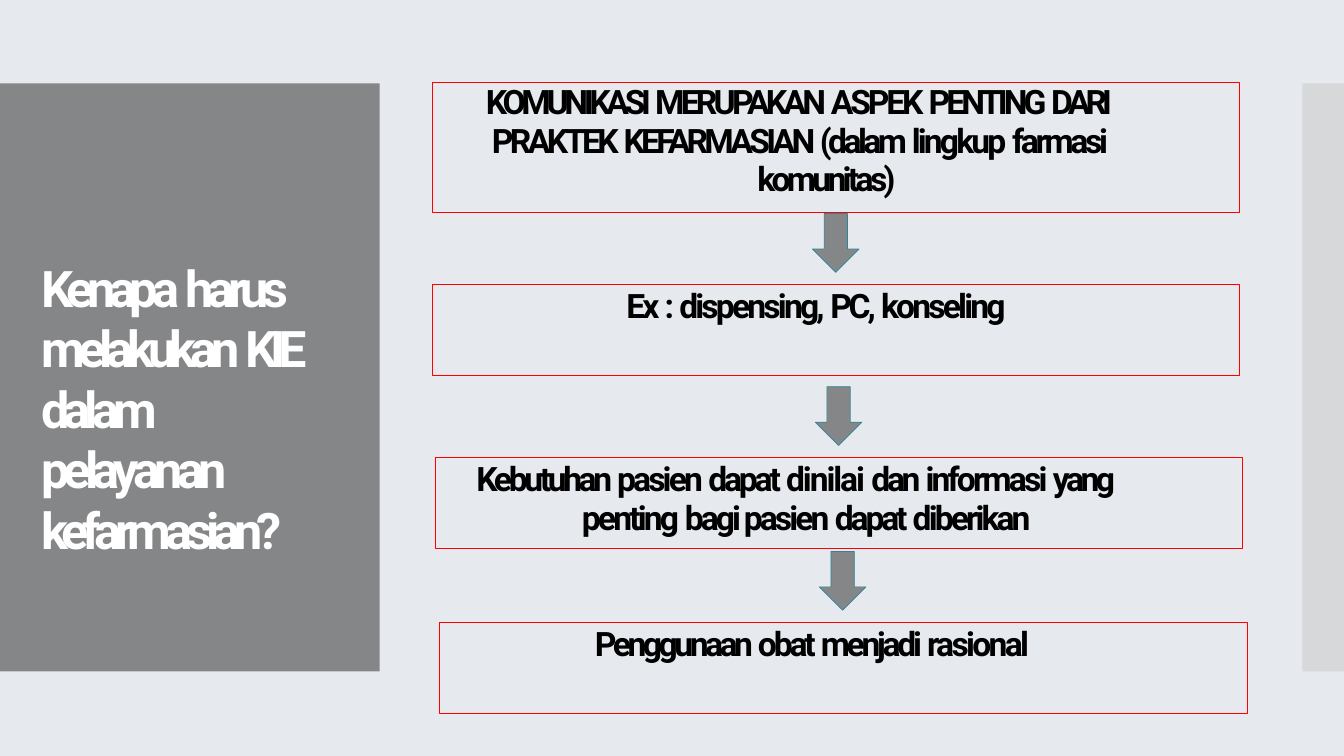
from pptx import Presentation
from pptx.dml.color import RGBColor
from pptx.enum import shapes, text
from pptx.oxml import ns, xmlchemy
from pptx.util import Pt

FONT = "Roboto"
GREY, RED, TEAL = "858688", "FF0000", "2C869A"
PANEL_TOP, PANEL_HEIGHT = 89.3, 630
BOX_WIDTH = 865
ARROW_SIZE = (50, 63)

TITLE = [("Kenapa", -6.7), ("harus", -6.5), ("melakukan", -6.7), ("KIE", -7.7),
         ("dalam", -6.2), ("pelayanan", -6.1), ("kefarmasian?", -6.5)]

STEPS = [
    {"box": (463.5, 88.3, 139), "text": (519.8, 87.8, 752.4, 125.3), "inset": 0.9,
     "paras": [
         {"margin": 0.9, "indent": 0, "before": 1, "line": 41.1,
          "words": [("KOMUNIKASI", -4.6), ("MERUPAKAN", -4), ("ASPEK", -3.4),
                    ("PENTING", -4.1), ("DARI", -5.2)]},
         {"margin": 291.6, "indent": -284.4, "before": 1.1, "line": 41,
          "words": [("PRAKTEK", -3.8), ("KEFARMASIAN", -4), ("(dalam", -3.8),
                    ("lingkup", -3), ("farmasi", -3.5), ("komunitas)", -3.9)]}]},
    {"box": (463.5, 304.3, 98), "text": (670.3, 304.6, 451.4, 45.4), "inset": 0.9,
     "paras": [
         {"margin": 0.9, "indent": 0, "before": 1, "line": None,
          "words": [("Ex", -3.3), (":", -3.5), ("dispensing,", -3), ("PC,", -3.4),
                    ("konseling", -3)]}]},
    {"box": (466.3, 490, 98), "text": (509, 488.9, 779.8, 86.4), "inset": 4.3,
     "paras": [
         {"margin": 114.5, "indent": -113, "before": 4.2, "line": 41,
          "words": [("Kebutuhan", -3.6), ("pasien", -3.1), ("dapat", -3.4),
                    ("dinilai", -2.2), ("dan", -3.6), ("informasi", -3),
                    ("yang", -3.8), ("penting", -3), ("bagi pasien", -3.1),
                    ("dapat", -3.4), ("diberikan", -3.1)]}]},
    {"box": (471.2, 667, 98), "text": (636.5, 666.7, 533.5, 45.4), "inset": 0.9,
     "paras": [
         {"margin": 0.9, "indent": 0, "before": 1, "line": None,
          "words": [("Penggunaan", -3.7), ("obat", -3.4), ("menjadi", -3.5),
                    ("rasional", -2.9)]}]},
]

ARROWS = [(870.5, 228.8), (873.5, 414.3), (877.8, 590.8)]


def color(value):
    return RGBColor.from_string(value)


def add_preset(page, kind, left, top, width, height, fill=None, line=None, weight=1):
    shape = page.shapes.add_shape(kind, Pt(left), Pt(top), Pt(width), Pt(height))
    shape.shadow.inherit = False
    if fill:
        shape.fill.solid()
        shape.fill.fore_color.rgb = color(fill)
    else:
        shape.fill.background()
    if line:
        shape.line.color.rgb = color(line)
        shape.line.width = Pt(weight)
    else:
        shape.line.fill.background()
    return shape


def set_frame(frame, left=0, top=0, right=0):
    frame.word_wrap = True
    frame.vertical_anchor = text.MSO_ANCHOR.TOP
    frame.margin_left, frame.margin_top = Pt(left), Pt(top)
    frame.margin_right, frame.margin_bottom = Pt(right), 0


def write_words(para, words, size, fill):
    para.alignment = text.PP_ALIGN.LEFT
    for number, (word, spacing) in enumerate(words, 1):
        span = para.add_run()
        span.text = word if number == len(words) else word + " "
        span.font.name = FONT
        span.font.size = Pt(size)
        span.font.bold = True
        span.font.color.rgb = color(fill)
        span.font._element.set("spc", str(round(spacing * 100)))


def add_step(page, step):
    left, top, height = step["box"]
    add_preset(page, shapes.MSO_SHAPE.RECTANGLE, left, top, BOX_WIDTH, height, line=RED)
    frame = page.shapes.add_textbox(*map(Pt, step["text"])).text_frame
    set_frame(frame, top=step["inset"])
    for number, item in enumerate(step["paras"]):
        para = frame.add_paragraph() if number else frame.paragraphs[0]
        props = para._p.get_or_add_pPr()
        props.set("marL", str(Pt(item["margin"])))
        props.set("indent", str(Pt(item["indent"])))
        para.space_before = Pt(item["before"])
        if item["line"]:
            para.line_spacing = Pt(item["line"])
        write_words(para, item["words"], 36, "000000")


def main():
    deck = Presentation()
    deck.slide_width, deck.slide_height = Pt(1440), Pt(810)
    page = deck.slides.add_slide(deck.slide_layouts[6])
    page.background.fill.solid()
    page.background.fill.fore_color.rgb = color("E6EAEE")

    strip = add_preset(page, shapes.MSO_SHAPE.RECTANGLE, 1395.4, PANEL_TOP, 44.6,
                       PANEL_HEIGHT, fill="C6C6C6")
    tint = strip._element.spPr.find(ns.qn("a:solidFill"))[0]
    alpha = xmlchemy.OxmlElement("a:alpha")
    alpha.set("val", "49000")
    tint.append(alpha)

    panel = add_preset(page, shapes.MSO_SHAPE.RECTANGLE, 0, PANEL_TOP, 406.8,
                       PANEL_HEIGHT, fill=GREY)
    set_frame(panel.text_frame, left=44, top=186, right=60)
    write_words(panel.text_frame.paragraphs[0], TITLE, 54, "FFFFFF")

    for step in STEPS:
        add_step(page, step)
    for left, top in ARROWS:
        add_preset(page, shapes.MSO_SHAPE.DOWN_ARROW, left, top, *ARROW_SIZE,
                   fill=GREY, line=TEAL, weight=0.75)
    deck.save("out.pptx")


if __name__ == "__main__":
    main()
